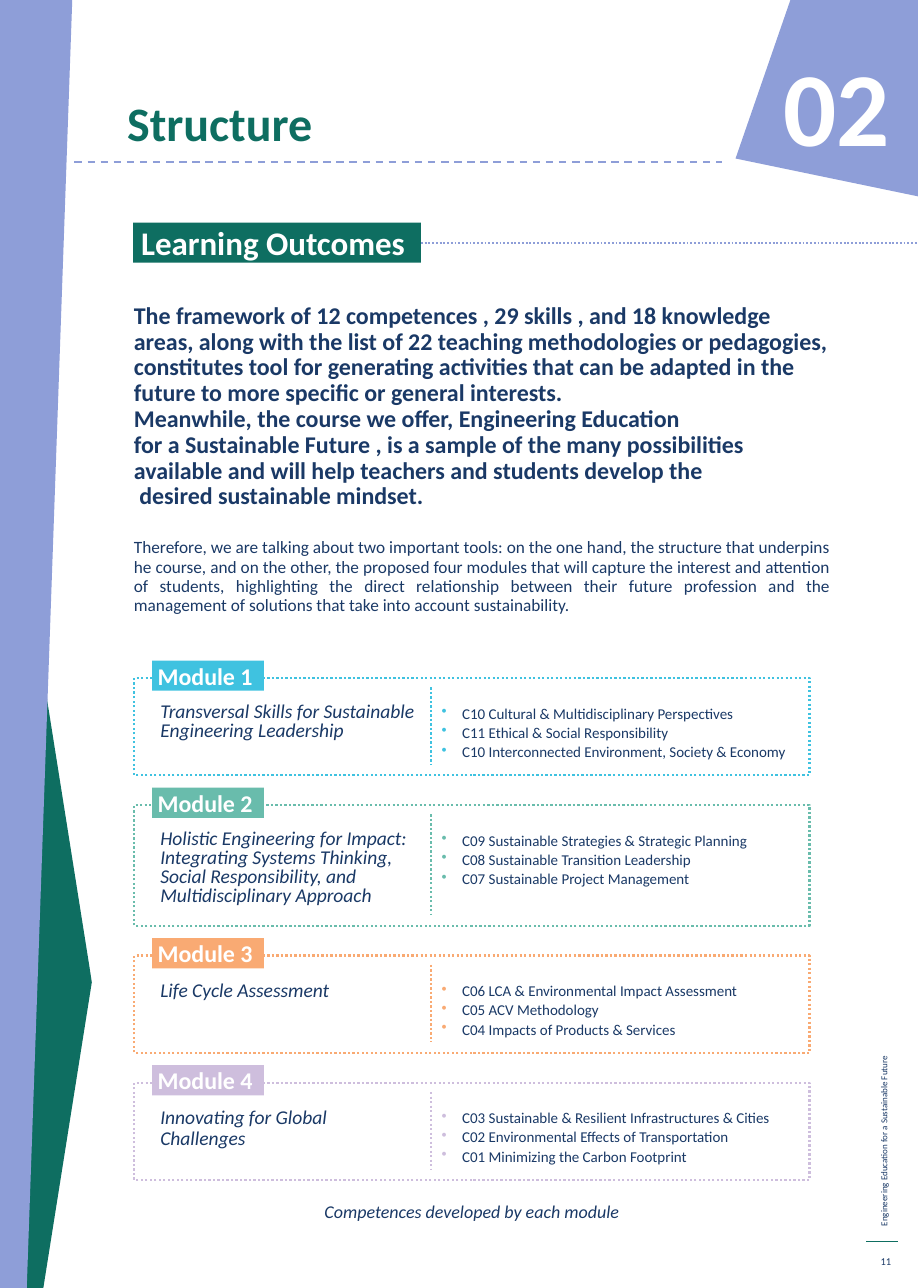
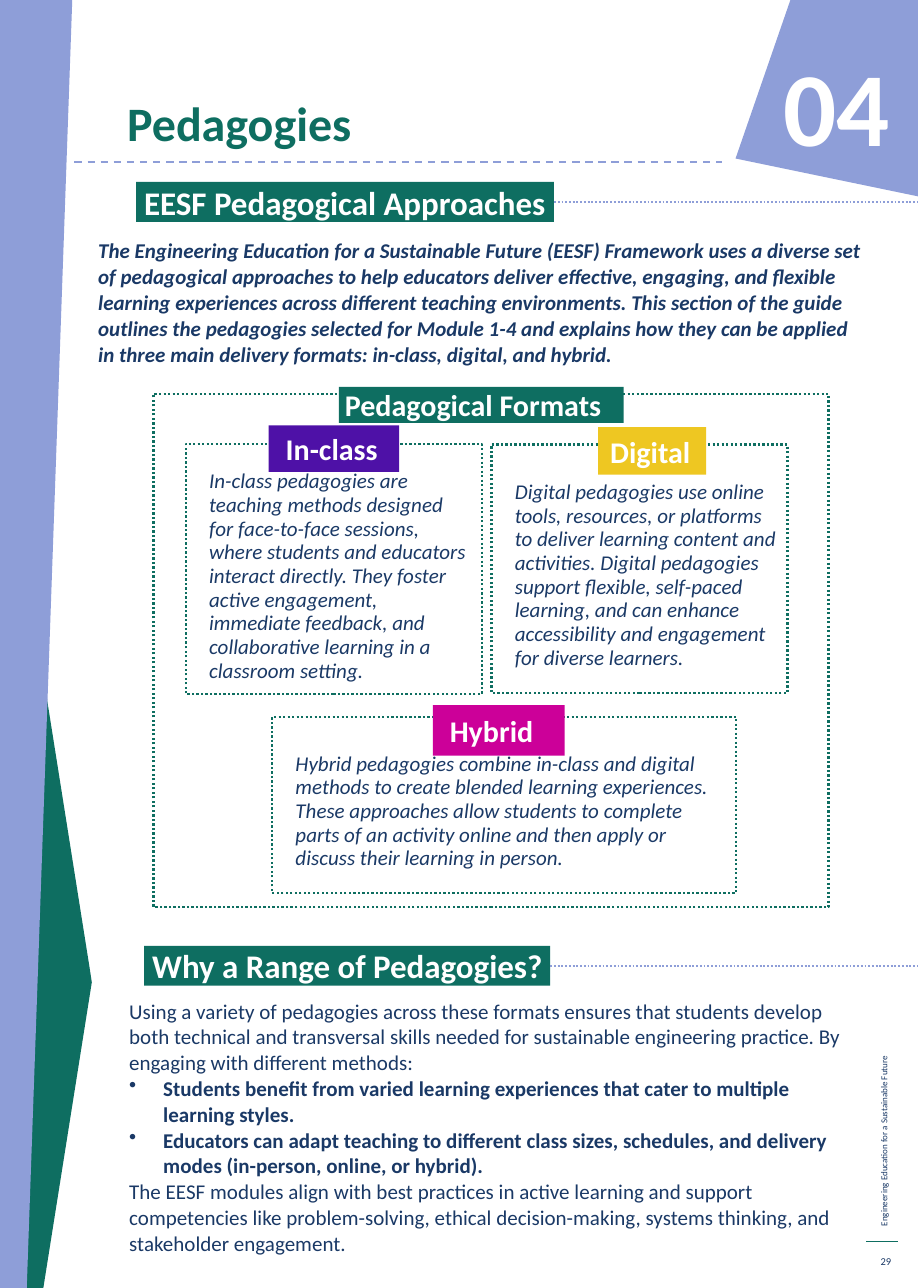
from lxml.etree import SubElement
from pptx import Presentation
from pptx.dml.color import RGBColor
from pptx.enum.dml import MSO_LINE
from pptx.enum.shapes import MSO_CONNECTOR, MSO_SHAPE
from pptx.enum.text import MSO_ANCHOR, PP_ALIGN
from pptx.oxml.ns import qn
from pptx.util import Cm, Pt

WIDTH, HEIGHT = 21.59, 30.3
FONT = "Calibri"
NAVY, GREEN, LILAC, WHITE = "1A3966", "0E6E61", "8E9ED8", "FFFFFF"
DOTS = MSO_LINE.ROUND_DOT
LEAD = {"size": 16, "bold": True, "spacing": 17.2}
SMALL = {"size": 11.5, "spacing": 12.8, "alignment": PP_ALIGN.JUSTIFY, "space_before": Pt(19)}
BODY = {"size": 14, "spacing": 17.2}
POINT = {**BODY, "bold": True, "bullet": NAVY, "indent": 0.8}

INTRO = [
    ("The framework of 12 competences , 29 skills , and 18 knowledge areas, along with the list of 22 "
     "teaching methodologies or pedagogies, constitutes tool for generating activities that can be "
     "adapted in the future to more specific or general interests.", LEAD),
    ("Meanwhile, the course we offer, Engineering Education", LEAD),
    ("for a Sustainable Future , is a sample of the many possibilities available and will help "
     "teachers and students develop the", LEAD),
    (" desired sustainable mindset.", LEAD),
    ("Therefore, we are talking about two important tools: on the one hand, the structure that "
     "underpins he course, and on the other, the proposed four modules that will capture the interest "
     "and attention of students, highlighting the direct relationship between their future profession "
     "and the management of solutions that take into account sustainability.", SMALL),
]
MODULES = [
    {"name": "Transversal Skills for Sustainable Engineering Leadership",
     "color": "3FC2E0", "height": 2.29, "name_width": 6.65, "spacing": 12.8,
     "skills": ["C10 Cultural & Multidisciplinary Perspectives",
                "C11 Ethical & Social Responsibility",
                "C10 Interconnected Environment, Society & Economy"]},
    {"name": "Holistic Engineering for Impact: Integrating Systems Thinking, "
             "Social Responsibility, and Multidisciplinary Approach",
     "color": "69BCAC", "height": 2.84, "name_width": 6.65, "spacing": 12.8,
     "skills": ["C09 Sustainable Strategies & Strategic Planning",
                "C08 Sustainable Transition Leadership",
                "C07 Sustainable Project Management"]},
    {"name": "Life Cycle Assessment",
     "color": "F9AA73", "height": 2.29, "name_width": 5.69, "spacing": 13.8,
     "skills": ["C06 LCA & Environmental Impact Assessment",
                "C05 ACV Methodology",
                "C04 Impacts of Products & Services"]},
    {"name": "Innovating for Global Challenges",
     "color": "CEBEDD", "height": 2.29, "name_width": 5.69, "spacing": 13.8,
     "skills": ["C03 Sustainable & Resilient Infrastructures & Cities",
                "C02 Environmental Effects of Transportation",
                "C01 Minimizing the Carbon Footprint"]},
]
APPROACHES = (
    "The Engineering Education for a Sustainable Future (EESF) Framework uses a diverse set of "
    "pedagogical approaches to help educators deliver effective, engaging, and flexible learning "
    "experiences across different teaching environments. This section of the guide outlines the "
    "pedagogies selected for Module 1-4 and explains how they can be applied in three main delivery "
    "formats: in-class, digital, and hybrid.")
FORMATS = [
    {"title": "In-class", "color": "4E11A7", "box": (0.76, 1.17, 6.96, 5.89),
     "tag": (1.95, -0.43, 3.07, 1.09), "pad": 0.4, "text_top": 0.48, "text_width": 6.63,
     "text": "In-class pedagogies are teaching methods designed for face-to-face sessions, where "
             "students and educators interact directly. They foster active engagement, immediate "
             "feedback, and collaborative learning in a classroom setting."},
    {"title": "Digital", "color": "EEC722", "box": (7.95, 1.19, 6.96, 5.84),
     "tag": (2.51, -0.41, 2.54, 1.12), "pad": 0.28, "text_top": 0.71, "text_width": 6.78,
     "text": "Digital pedagogies use online tools, resources, or platforms to deliver learning "
             "content and activities. Digital pedagogies support flexible, self-paced learning, and "
             "can enhance accessibility and engagement for diverse learners."},
    {"title": "Hybrid", "color": "CC0099", "box": (2.79, 7.6, 10.92, 4.14),
     "tag": (3.78, -0.28, 3.1, 1.19), "pad": 0.4, "text_top": 0.69, "text_width": 10.57,
     "text": "Hybrid pedagogies combine in-class and digital methods to create blended learning "
             "experiences. These approaches allow students to complete parts of an activity online "
             "and then apply or discuss their learning in person."},
]
REASONS = [
    ("Using a variety of pedagogies across these formats ensures that students develop both technical "
     "and transversal skills needed for sustainable engineering practice. By engaging with different "
     "methods:", BODY),
    ("Students benefit from varied learning experiences that cater to multiple learning styles.", POINT),
    ("Educators can adapt teaching to different class sizes, schedules, and delivery modes "
     "(in-person, online, or hybrid).", POINT),
    ("The EESF modules align with best practices in active learning and support competencies like "
     "problem-solving, ethical decision-making, systems thinking, and stakeholder engagement.", BODY),
]


def rgb(value):
    """Turn a hex string into a colour."""
    return RGBColor.from_string(value)


def write(p, text, size, color=NAVY, spacing=None, bullet=None, indent=0, bold=False, italic=False, **fmt):
    """Fill one paragraph with formatted text."""
    r = p.add_run()
    r.text = text
    for name, value in {"name": FONT, "size": Pt(size), "bold": bold, "italic": italic}.items():
        setattr(r.font, name, value)
    r.font.color.rgb = rgb(color)
    if spacing:
        fmt["line_spacing"] = spacing if spacing < 2 else Pt(spacing)
    for name, value in fmt.items():
        setattr(p, name, value)
    if bullet:
        pPr = p._p.get_or_add_pPr()
        pPr.set("marL", str(Cm(indent)))
        pPr.set("indent", str(-Cm(indent)))
        SubElement(SubElement(pPr, qn("a:buClr")), qn("a:srgbClr"), val=bullet)
        SubElement(pPr, qn("a:buChar"), char="•")


def add_text(s, box, paragraphs, anchor=MSO_ANCHOR.TOP):
    """Add a wrapping text box from (text, format) pairs."""
    sp = s.shapes.add_textbox(*map(Cm, box))
    tf = sp.text_frame
    tf.word_wrap, tf.vertical_anchor = True, anchor
    for i, (text, fmt) in enumerate(paragraphs):
        write(tf.add_paragraph() if i else tf.paragraphs[0], text, **fmt)
    return sp


def add_line(s, x1, y1, x2, y2, color, width, dash=None):
    """Add a straight line."""
    ln = s.shapes.add_connector(MSO_CONNECTOR.STRAIGHT, *map(Cm, (x1, y1, x2, y2)))
    ln.line.color.rgb, ln.line.width = rgb(color), Pt(width)
    if dash:
        ln.line.dash_style = dash
    SubElement(ln._element.spPr, qn("a:effectLst"))
    return ln


def add_polygon(s, points, color):
    """Add a filled closed outline."""
    start, *rest = [(Cm(x), Cm(y)) for x, y in points]
    fb = s.shapes.build_freeform(*start)
    fb.add_line_segments(rest, close=True)
    sp = fb.convert_to_shape()
    sp.shadow.inherit = False
    sp.fill.solid()
    sp.fill.fore_color.rgb = rgb(color)
    sp.line.fill.background()


def add_frame(s, box, color):
    """Add an empty dotted rectangle."""
    sp = s.shapes.add_shape(MSO_SHAPE.RECTANGLE, *map(Cm, box))
    sp.shadow.inherit = False
    sp.fill.background()
    sp.line.color.rgb, sp.line.width, sp.line.dash_style = rgb(color), Pt(1.5), DOTS


def add_label(s, box, text, color, size, pad):
    """Add a filled rectangle with a bold white heading."""
    sp = s.shapes.add_shape(MSO_SHAPE.RECTANGLE, *map(Cm, box))
    sp.shadow.inherit = False
    sp.fill.solid()
    sp.fill.fore_color.rgb = rgb(color)
    sp.line.fill.background()
    tf = sp.text_frame
    margins = {"margin_left": Cm(pad), "margin_right": 0, "margin_top": 0, "margin_bottom": 0}
    for name, value in {**margins, "word_wrap": True, "vertical_anchor": MSO_ANCHOR.MIDDLE}.items():
        setattr(tf, name, value)
    write(tf.paragraphs[0], text, size, WHITE, bold=True, alignment=PP_ALIGN.LEFT)
    return sp


def add_section(s, x, y, w, text):
    """Add a section heading with a dotted rule to the page edge."""
    h = 0.94
    sp = add_label(s, (x, y, w, h), text, GREEN, 22, 0.19)
    ln = add_line(s, x + w, y + h / 2, WIDTH, y + h / 2, LILAC, 1.25, DOTS)
    ln.begin_connect(sp, 3)


def add_page(prs, title, chapter, number):
    """Add a slide with side bands, title, chapter badge and footer."""
    s = prs.slides.add_slide(prs.slide_layouts[6])
    side = add_text(s, (15.09, 23.14, 11.4, 0.51),
                    [("Engineering Education for a Sustainable Future", {"size": 6})])
    side.rotation = 270
    add_line(s, 20.37, 29.21, 21.13, 29.21, GREEN, 0.75)
    add_text(s, (20.37, 29.31, 0.84, 0.74), [(number, {"size": 7, "alignment": PP_ALIGN.RIGHT})],
             MSO_ANCHOR.MIDDLE)
    add_polygon(s, [(1.02, HEIGHT), (0.58, HEIGHT), (0.58, 13.13), (2.11, 22.78), (2.16, 23.11)], GREEN)
    add_polygon(s, [(0, 0), (1.7, 0), (0.63, HEIGHT), (0, HEIGHT)], LILAC)
    add_line(s, 1.75, 3.81, 16.97, 3.81, LILAC, 1.25, MSO_LINE.DASH)
    add_polygon(s, [(WIDTH, 0), (18.59, 0), (17.3, 3.73), (WIDTH, 4.62)], LILAC)
    add_text(s, (16.61, 0.86, 4.57, 3.61),
             [(chapter, {"size": 70, "color": WHITE, "bold": True, "alignment": PP_ALIGN.RIGHT})])
    add_text(s, (2.74, 1.7, 11.46, 1.96),
             [(title, {"size": 32, "color": GREEN, "bold": True, "spacing": 0.74})], MSO_ANCHOR.BOTTOM)
    return s


def add_module(s, x, y, w, title, module):
    """Add one module: frame, tag, name, divider and skills."""
    h, color = module["height"], module["color"]
    add_frame(s, (x, y, w, h), color)
    add_label(s, (x + 0.42, y - 0.41, 2.63, 0.71), title, color, 16, 0.13)
    add_text(s, (x + 0.36, y + 0.46, module["name_width"], 2.03),
             [(module["name"], {"size": 13, "italic": True, "spacing": module["spacing"]})])
    skill = {"size": 10, "spacing": 12.8, "bullet": color, "indent": 0.48}
    add_text(s, (x + 6.98, y + 0.46, 8.69, 2.03), [(text, skill) for text in module["skills"]])
    add_line(s, x + 6.98, y + 0.22, x + 6.98, y + h - 0.26, color, 1.5, DOTS)


def add_format(s, left, top, card):
    """Add one pedagogical format card inside the panel at left, top."""
    x, y, w, h = card["box"]
    x, y = left + x, top + y
    dx, dy, tag_w, tag_h = card["tag"]
    add_frame(s, (x, y, w, h), GREEN)
    add_text(s, (x + 0.3, y + card["text_top"], card["text_width"], h - card["text_top"]),
             [(card["text"], {"size": 14, "italic": True, "spacing": 15.8})])
    add_label(s, (x + dx, y + dy, tag_w, tag_h), card["title"], card["color"], 20, card["pad"])


def structure_slide(prs):
    """Build the page on learning outcomes and modules."""
    s = add_page(prs, "Structure", "02", "11")
    add_section(s, 3.13, 5.24, 6.77, "Learning Outcomes")
    add_text(s, (2.9, 7.01, 16.87, 8.08), INTRO)
    x, y, w, gap = 3.16, 15.95, 15.88, 0.7
    for i, module in enumerate(MODULES, 1):
        add_module(s, x, y, w, f"Module {i}", module)
        y += module["height"] + gap
    add_text(s, (x, 28.12, w, 0.76),
             [("Competences developed by each module",
               {"size": 12, "italic": True, "alignment": PP_ALIGN.CENTER})])


def pedagogies_slide(prs):
    """Build the page on pedagogical approaches and formats."""
    s = add_page(prs, "Pedagogies", "04", "29")
    add_section(s, 3.2, 4.28, 9.83, "EESF Pedagogical Approaches")
    add_text(s, (2.06, 5.46, 18.54, 3.5), [(APPROACHES, {**BODY, "bold": True, "italic": True})])
    x, y = 3.61, 9.27
    add_frame(s, (x, y, 15.88, 12.07), GREEN)
    add_label(s, (x + 4.36, y - 0.17, 6.7, 0.85), "Pedagogical Formats", GREEN, 20, 0.14)
    for card in FORMATS:
        add_format(s, x, y, card)
    add_section(s, 3.39, 22.25, 9.55, "Why a Range of Pedagogies?")
    add_text(s, (2.79, 23.34, 17.81, 5.69), REASONS)


def main():
    """Build and save the presentation."""
    prs = Presentation()
    prs.slide_width, prs.slide_height = Cm(WIDTH), Cm(HEIGHT)
    structure_slide(prs)
    pedagogies_slide(prs)
    prs.save("out.pptx")


if __name__ == "__main__":
    main()
